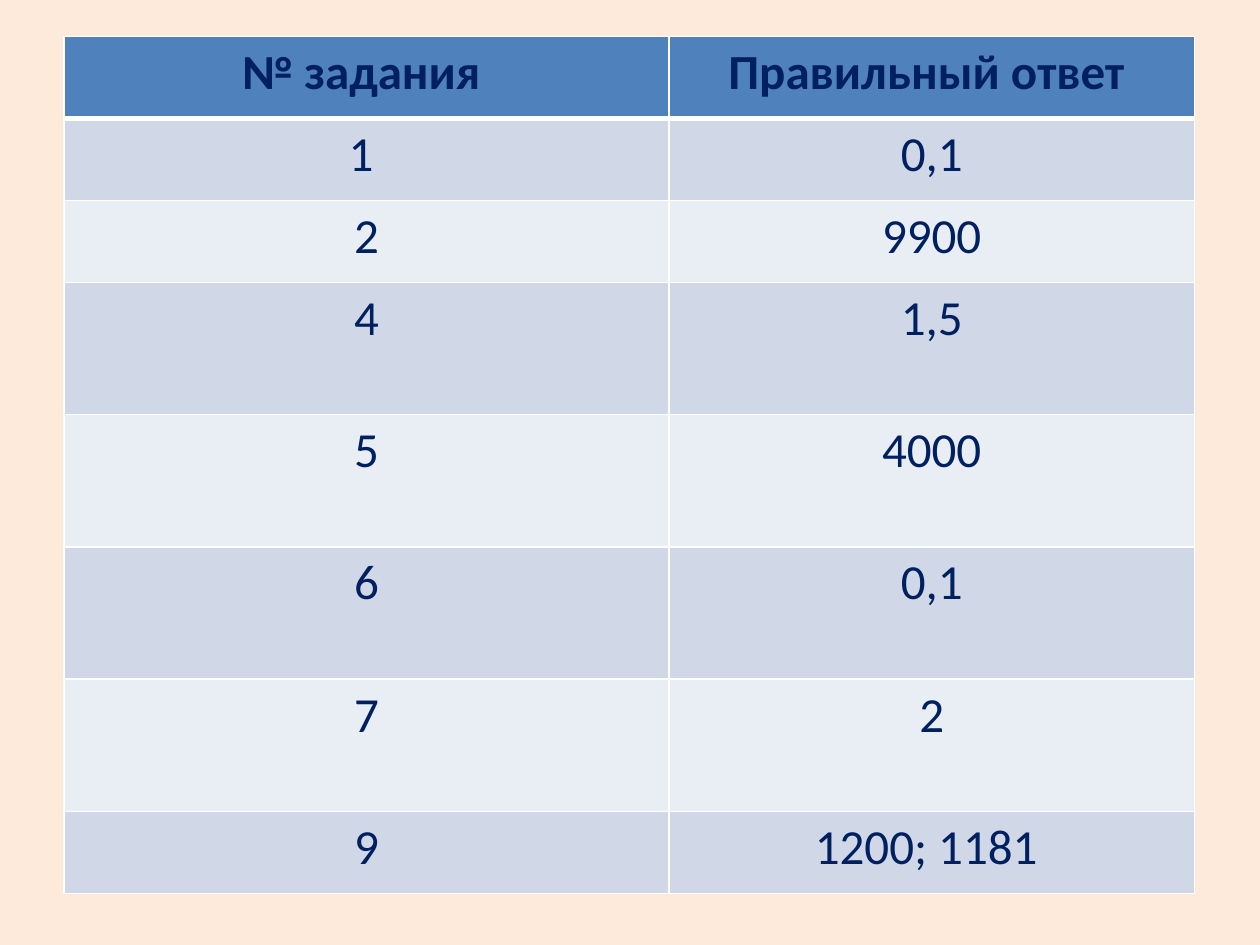
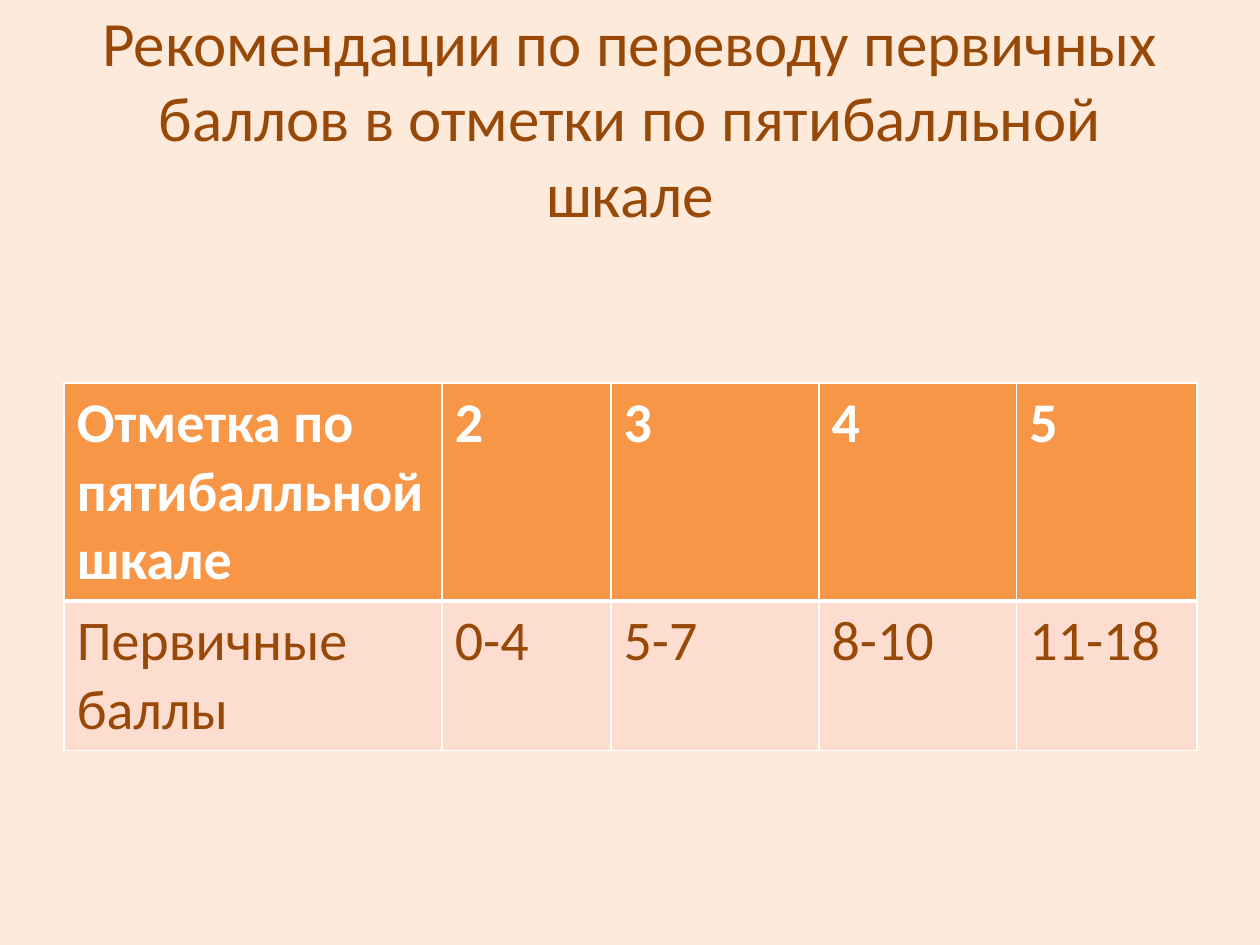
from dataclasses import dataclass

import pptx
import pptx.dml.color
import pptx.enum.text
import pptx.oxml.ns
import pptx.util
from lxml import etree

Inches = pptx.util.Inches
ALIGN = pptx.enum.text.PP_ALIGN
ANCHOR = pptx.enum.text.MSO_ANCHOR


@dataclass(frozen=True)
class Theme:
    font: str = "Calibri"
    background: str = "FDEADA"
    rule: str = "FFFFFF"
    thin: float = 1
    thick: float = 3
    navy: str = "002060"
    brown: str = "984807"
    white: str = "FFFFFF"
    blue: str = "4F81BD"
    blue_bands: tuple = ("D0D8E8", "E9EDF4")
    orange: str = "F79646"
    orange_bands: tuple = ("FCDDCF",)
    title_size: int = 36
    answer_size: int = 28
    grade_size: int = 32


THEME = Theme()


def rgb(value):
    return pptx.dml.color.RGBColor.from_string(value)


def write_text(frame, text, *, size, color, bold=False, align=ALIGN.LEFT):
    paragraph = frame.paragraphs[0]
    paragraph.alignment = align
    run = paragraph.add_run()
    run.text = text
    run.font.name = THEME.font
    run.font.size = pptx.util.Pt(size)
    run.font.bold = bold
    run.font.color.rgb = rgb(color)


def add_borders(cell, **widths):
    """Draw the four cell edges; widths overrides the thin rule by side."""
    qn = pptx.oxml.ns.qn
    properties = cell._tc.get_or_add_tcPr()
    for side in "LRTB":
        width = pptx.util.Pt(widths.get(side, THEME.thin))
        line = etree.SubElement(properties, qn(f"a:ln{side}"), w=str(width))
        fill = etree.SubElement(line, qn("a:solidFill"))
        etree.SubElement(fill, qn("a:srgbClr"), val=THEME.rule)


def add_slide(deck, layout):
    slide = deck.slides.add_slide(deck.slide_layouts.get_by_name(layout))
    slide.background.fill.solid()
    slide.background.fill.fore_color.rgb = rgb(THEME.background)
    return slide


def add_banded_table(slide, left, top, widths, heights, rows, *, header_fill,
                     bands, header_color, body_color, size, align=ALIGN.LEFT):
    table = slide.shapes.add_table(
        len(rows), len(widths), Inches(left), Inches(top),
        Inches(sum(widths)), Inches(sum(heights))).table
    table.horz_banding = False
    for column, width in zip(table.columns, widths):
        column.width = Inches(width)
    for r, (values, height) in enumerate(zip(rows, heights)):
        table.rows[r].height = Inches(height)
        is_header = r == 0
        # A thick rule separates the header from the body
        edges = {0: {"B": THEME.thick}, 1: {"T": THEME.thick}}.get(r, {})
        for c, value in enumerate(values):
            cell = table.cell(r, c)
            add_borders(cell, **edges)
            cell.fill.solid()
            cell.fill.fore_color.rgb = rgb(
                header_fill if is_header else bands[(r - 1) % len(bands)])
            write_text(cell.text_frame, value, size=size, bold=is_header,
                       color=header_color if is_header else body_color,
                       align=align)


def add_title(slide, left, top, width, height, text):
    title = slide.shapes.title
    title.left, title.top = Inches(left), Inches(top)
    title.width, title.height = Inches(width), Inches(height)
    frame = title.text_frame
    frame.word_wrap = True
    frame.auto_size = pptx.enum.text.MSO_AUTO_SIZE.NONE
    frame.vertical_anchor = ANCHOR.MIDDLE
    write_text(frame, text, size=THEME.title_size, color=THEME.brown,
               align=ALIGN.CENTER)


def build_answers(deck):
    slide = add_slide(deck, "Blank")
    answers = [
        ("№ задания ", "Правильный ответ "),
        ("1 ", "0,1"),
        ("2", "9900"),
        ("4", "1,5"),
        ("5", "4000"),
        ("6", "0,1"),
        ("7", "2"),
        ("9", "1200; 1181 "),
    ]
    short, tall = 0.65, 1.05
    heights = [short] * 3 + [tall] * 4 + [short]
    add_banded_table(slide, 0.51, 0.29, [4.8, 4.17], heights, answers,
                     header_fill=THEME.blue, bands=THEME.blue_bands,
                     header_color=THEME.navy, body_color=THEME.navy,
                     size=THEME.answer_size, align=ALIGN.CENTER)


def build_grades(deck):
    slide = add_slide(deck, "Title Only")
    add_title(slide, 0.5, 0.3, 9, 1.25,
              "Рекомендации по переводу первичных баллов в отметки "
              "по пятибалльной шкале")
    grades = [
        ("Отметка по пятибалльной шкале", "2", "3", "4", "5"),
        ("Первичные баллы", "0-4", "5-7", "8-10", "11-18"),
    ]
    add_banded_table(slide, 0.51, 3.04, [3, 1.34, 1.65, 1.57, 1.43],
                     [1.73, 1.18], grades,
                     header_fill=THEME.orange, bands=THEME.orange_bands,
                     header_color=THEME.white, body_color=THEME.brown,
                     size=THEME.grade_size)


def main():
    deck = pptx.Presentation()
    deck.slide_width, deck.slide_height = Inches(10), Inches(7.5)
    build_answers(deck)
    build_grades(deck)
    deck.save("out.pptx")


if __name__ == "__main__":
    main()
